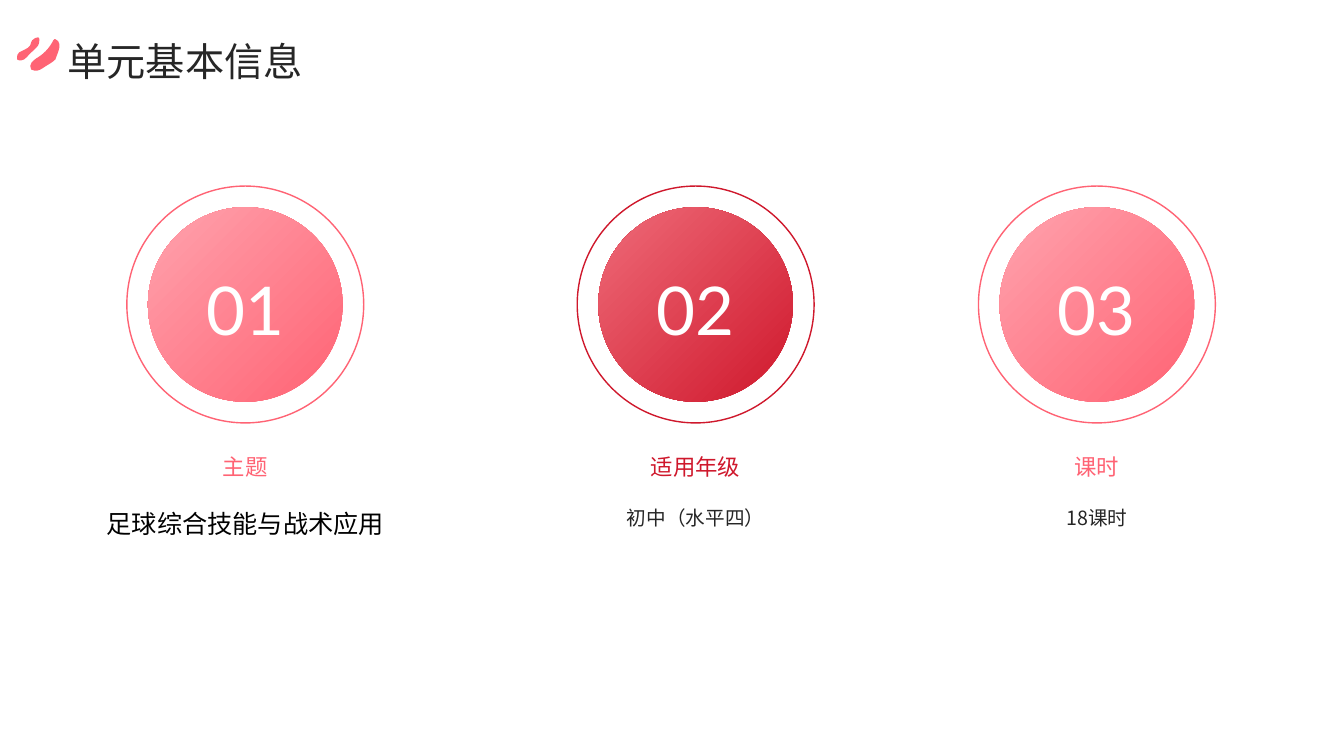
import pptx
import pptx.dml.color
import pptx.enum.shapes
import pptx.enum.text
import pptx.oxml.ns
import pptx.util
from lxml import etree

Pt = pptx.util.Pt
RGB = pptx.dml.color.RGBColor
ALIGN = pptx.enum.text.PP_ALIGN
ANCHOR = pptx.enum.text.MSO_ANCHOR
CIRCLE = pptx.enum.shapes.MSO_SHAPE.FLOWCHART_CONNECTOR
qn = pptx.oxml.ns.qn

PINK = RGB(0xFF, 0x63, 0x74)
LIGHT_PINK = RGB(0xFF, 0xA1, 0xAC)
RED = RGB(0xCF, 0x18, 0x2C)
LIGHT_RED = RGB(0xEE, 0x69, 0x77)
DARK = RGB(0x26, 0x26, 0x26)
BLACK = RGB(0, 0, 0)
WHITE = RGB(0xFF, 0xFF, 0xFF)

# Brush strokes in hundredths of an inch: a start point, then cubic curves
BRUSH = [
    [(21, 60),
     (20, 60), (18, 60), (17, 59), (17, 59), (17, 59), (17, 59),
     (17, 58), (17, 58), (17, 58), (16, 56), (18, 53), (19, 52),
     (21, 51), (23, 50), (25, 49), (27, 48), (29, 47), (30, 45),
     (31, 43), (31, 41), (32, 40), (34, 38), (36, 37), (38, 37),
     (40, 37), (39, 43), (38, 45), (36, 48), (32, 51), (29, 54),
     (28, 56), (26, 57), (24, 59), (23, 59), (22, 60), (21, 60)],
    [(34, 70),
     (33, 70), (32, 70), (31, 69), (28, 64), (33, 60), (36, 58),
     (43, 54), (49, 48), (53, 40), (53, 40), (54, 39), (54, 39),
     (54, 39), (55, 39), (55, 39), (57, 39), (59, 42), (59, 44),
     (59, 46), (59, 49), (58, 51), (57, 54), (56, 56), (55, 59),
     (52, 62), (48, 64), (45, 66), (42, 68), (38, 71), (34, 70)],
]


class Deck:
    font = "Noto Sans CJK SC"
    number_font = "Lato"

    def __init__(self):
        self.prs = pptx.Presentation()
        self.prs.slide_width, self.prs.slide_height = Pt(960), Pt(540)
        self.s = self.prs.slides.add_slide(self.prs.slide_layouts[6])

    def text(self, x, y, w, h, text, size, color, font=None, spacing=1.3,
             align=ALIGN.CENTER, anchor=ANCHOR.MIDDLE):
        tf = self.s.shapes.add_textbox(Pt(x), Pt(y), Pt(w), Pt(h)).text_frame
        tf.word_wrap = True
        tf.vertical_anchor = anchor
        tf.text = text
        p = tf.paragraphs[0]
        p.alignment, p.line_spacing = align, spacing
        r = p.runs[0]
        r.font.size, r.font.name = Pt(size), font or self.font
        r.font.color.rgb = color
        ea = etree.SubElement(r.font._element, qn("a:ea"))
        ea.set("typeface", font or self.font)

    def circle(self, cx, cy, d):
        sp = self.s.shapes.add_shape(
            CIRCLE, Pt(cx - d / 2), Pt(cy - d / 2), Pt(d), Pt(d))
        sp.shadow.inherit = False
        return sp

    def disc(self, cx, cy, d, color, light):
        sp = self.circle(cx, cy, d)
        sp.line.fill.background()
        sp.fill.gradient()
        sp.fill.gradient_angle = 135
        stops = sp.fill.gradient_stops
        for stop, rgb, pos in zip(stops, (color, light), (0, 0.98)):
            stop.color.rgb, stop.position = rgb, pos

    def ring(self, cx, cy, d, color):
        sp = self.circle(cx, cy, d)
        sp.fill.background()
        sp.line.color.rgb, sp.line.width = color, Pt(1)

    def curves(self, contours, color):
        first, *others = contours
        fb = self.s.shapes.build_freeform(*first[0], scale=Pt(0.72))
        fb.add_line_segments(first[1:])
        for contour in others:
            fb.move_to(*contour[0])
            fb.add_line_segments(contour[1:])
        sp = fb.convert_to_shape()
        # Join every three line points into one cubic curve
        lines = list(sp._element.iter(qn("a:lnTo")))
        for curve, *rest in zip(lines[::3], lines[1::3], lines[2::3]):
            curve.tag = qn("a:cubicBezTo")
            for line in rest:
                curve.append(line[0])
                line.getparent().remove(line)
        sp.shadow.inherit = False
        sp.fill.solid()
        sp.fill.fore_color.rgb = color
        sp.line.fill.background()


def main():
    deck = Deck()

    # Three columns: centre, number, label, detail, detail size and colours
    columns = [
        (175.2, "01", "主题", "足球综合技能与战术应用", 18, BLACK, PINK, LIGHT_PINK),
        (496.9, "02", "适用年级", "初中（水平四）", 14, DARK, RED, LIGHT_RED),
        (783.5, "03", "课时", "18课时", 14, DARK, PINK, LIGHT_PINK),
    ]
    cy, width = 217.5, 245.4
    for cx, number, label, detail, size, ink, color, light in columns:
        left = cx - width / 2
        deck.text(left, 352.8, width, 138.2, detail, size, ink,
                  anchor=ANCHOR.TOP)
        deck.disc(cx, cy, 139, color, light)
        deck.ring(cx, cy, 169.2, color)
        deck.text(left, 307, width, 46.8, label, 16, color)
        deck.text(cx - 51.5, 179.3, 103, 76.3, number, 48, WHITE,
                  font=deck.number_font, spacing=1.1)

    # Heading with its brush mark
    deck.text(41.2, 18.3, 855.4, 40.3, "单元基本信息", 28, DARK,
              align=ALIGN.LEFT)
    deck.curves(BRUSH, PINK)

    deck.prs.save("out.pptx")


if __name__ == "__main__":
    main()
